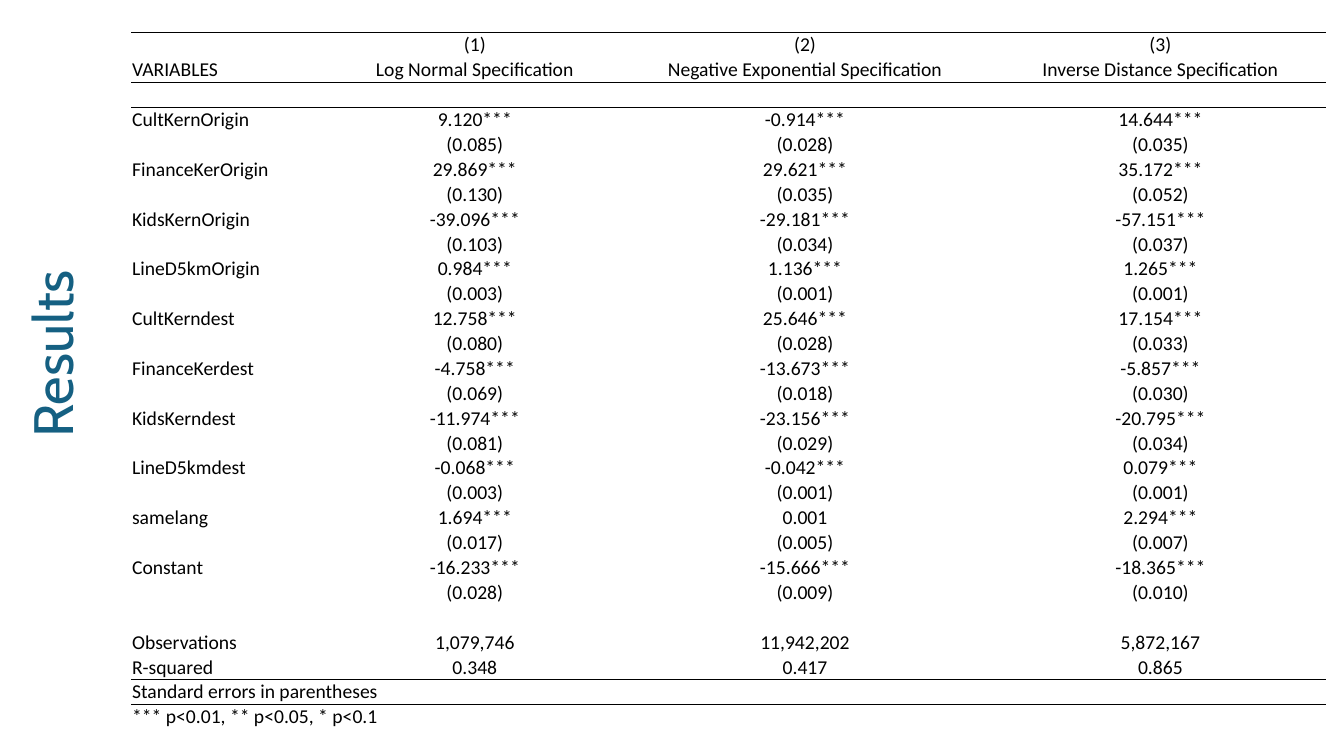
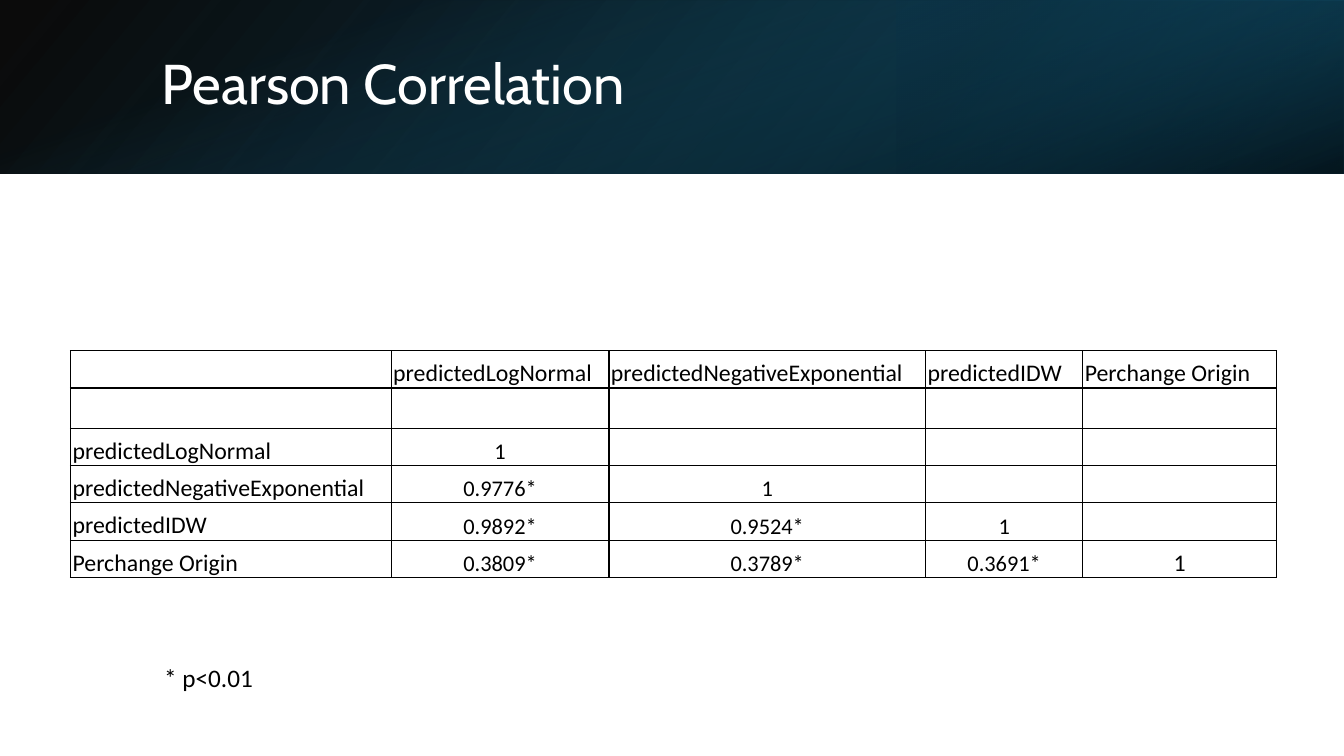
from dataclasses import dataclass

from lxml import etree
from pptx import Presentation
from pptx import util as u
from pptx.dml import color
from pptx.enum import shapes, text
from pptx.oxml import ns


@dataclass(frozen=True)
class Theme:
    heading_font: str = "Cabin"
    body_font: str = "Calibri"
    accent: str = "156082"
    deep: str = "104862"
    night: str = "0B3041"
    ink: str = "000000"
    paper: str = "FFFFFF"
    title_size: float = 40
    side_title_size: float = 39.6
    note_size: float = 18
    label_size: float = 17
    value_size: float = 16
    results_size: float = 14
    table_style: str = "{2D5ABB26-0587-4C30-8999-92F81FD0307C}"


THEME = Theme()
LEFT, CENTER = text.PP_ALIGN.LEFT, text.PP_ALIGN.CENTER

ESTIMATES = [
    ("CultKernOrigin", ("9.120***", "-0.914***", "14.644***"), ("0.085", "0.028", "0.035")),
    ("FinanceKerOrigin", ("29.869***", "29.621***", "35.172***"), ("0.130", "0.035", "0.052")),
    ("KidsKernOrigin", ("-39.096***", "-29.181***", "-57.151***"), ("0.103", "0.034", "0.037")),
    ("LineD5kmOrigin", ("0.984***", "1.136***", "1.265***"), ("0.003", "0.001", "0.001")),
    ("CultKerndest", ("12.758***", "25.646***", "17.154***"), ("0.080", "0.028", "0.033")),
    ("FinanceKerdest", ("-4.758***", "-13.673***", "-5.857***"), ("0.069", "0.018", "0.030")),
    ("KidsKerndest", ("-11.974***", "-23.156***", "-20.795***"), ("0.081", "0.029", "0.034")),
    ("LineD5kmdest", ("-0.068***", "-0.042***", "0.079***"), ("0.003", "0.001", "0.001")),
    ("samelang", ("1.694***", "0.001", "2.294***"), ("0.017", "0.005", "0.007")),
    ("Constant", ("-16.233***", "-15.666***", "-18.365***"), ("0.028", "0.009", "0.010")),
]
PREDICTORS = ["predictedLogNormal", "predictedNegativeExponential", "predictedIDW", "Perchange Origin"]
CORRELATIONS = [
    ["1"],
    ["0.9776*", "1"],
    ["0.9892*", "0.9524*", "1"],
    ["0.3809*", "0.3789*", "0.3691*", "1"],
]


def set_values(target, values):
    for name, value in values.items():
        setattr(target, name, value)


def add_child(parent, tag, **attributes):
    return etree.SubElement(parent, ns.qn(tag), attributes)


class SlideBuilder:
    def __init__(self, theme):
        self.theme = theme
        self.deck = Presentation()
        set_values(self.deck, {"slide_width": u.Inches(13.33), "slide_height": u.Inches(7.5)})
        self.slide = None

    def new_slide(self):
        self.slide = self.deck.slides.add_slide(self.deck.slide_layouts[5])
        fill = self.slide.background.fill
        fill.solid()
        fill.fore_color.rgb = color.RGBColor.from_string(self.theme.paper)

    def place(self, shape, box):
        set_values(shape, dict(zip(("left", "top", "width", "height"), map(u.Inches, box))))

    def add_words(self, para, words, size, ink=None, font=None, align=LEFT):
        para.alignment = align
        span = para.add_run()
        span.text = words
        set_values(span.font, {"size": u.Pt(size), "name": font or self.theme.body_font})
        span.font.color.rgb = color.RGBColor.from_string(ink or self.theme.ink)

    def title(self, words, box, size, ink, align=LEFT, rotation=0):
        title = self.slide.shapes.title
        self.place(title, box)
        title.rotation = rotation
        title.text_frame.vertical_anchor = text.MSO_ANCHOR.MIDDLE
        para = title.text_frame.paragraphs[0]
        para.line_spacing = 0.9
        self.add_words(para, words, size, ink, self.theme.heading_font, align)
        title.element.getparent().append(title.element)

    def gradient(self, box, stops, angle, rotation=0, flip=False):
        shape = self.slide.shapes.add_shape(shapes.MSO_SHAPE.RECTANGLE, *map(u.Inches, box))
        shape.rotation = rotation
        shape.shadow.inherit = False
        shape.line.fill.background()
        shape.fill.background()
        properties = shape.element.spPr
        if flip:
            properties.find(ns.qn("a:xfrm")).set("flipH", "1")
        empty_fill = properties.find(ns.qn("a:noFill"))
        grad = etree.Element(ns.qn("a:gradFill"), {"rotWithShape": "1"})
        stop_list = add_child(grad, "a:gsLst")
        for position, tint, opacity in stops:
            stop = add_child(stop_list, "a:gs", pos=str(position * 1000))
            rgb = add_child(stop, "a:srgbClr", val=tint)
            add_child(rgb, "a:alpha", val=str(opacity * 1000))
        add_child(grad, "a:lin", ang=str(angle * 60000), scaled="0")
        properties.replace(empty_fill, grad)

    def band(self):
        theme = self.theme
        self.gradient((0, 0, 13.33, 1.72), [(0, theme.ink, 96), (100, theme.deep, 100)], 140, flip=True)
        self.gradient((8.89, 0, 4.44, 1.72), [(19, theme.night, 68), (100, theme.accent, 79)],
                      320, rotation=180, flip=True)
        self.gradient((5.8, -5.8, 1.72, 13.33), [(23, theme.accent, 0), (99, theme.ink, 74)],
                      340, rotation=90)

    def border(self, cell, sides, width):
        properties = cell._tc.get_or_add_tcPr()
        for index, side in enumerate(sides):
            line = etree.Element(ns.qn("a:ln" + side), {"w": str(u.Pt(width))})
            add_child(add_child(line, "a:solidFill"), "a:srgbClr", val=self.theme.ink)
            properties.insert(index, line)

    def table(self, corner, widths, heights, rows, style_of, sides_of, line_width):
        box = (*corner, sum(widths), sum(heights))
        frame = self.slide.shapes.add_table(len(rows), len(widths), *map(u.Inches, box))
        table = frame.table
        set_values(table, {"first_row": False, "horz_banding": False})
        next(frame.element.iter(ns.qn("a:tableStyleId"))).text = self.theme.table_style
        for column, width in zip(table.columns, widths):
            column.width = u.Inches(width)
        for r, (row, height, words) in enumerate(zip(table.rows, heights, rows)):
            row.height = u.Inches(height)
            for c, cell in enumerate(row.cells):
                size, inset, align = style_of(r, c)
                margins = dict.fromkeys(("margin_left", "margin_right", "margin_top"), u.Inches(inset))
                set_values(cell, {**margins, "margin_bottom": 0,
                                  "vertical_anchor": text.MSO_ANCHOR.BOTTOM})
                cell.fill.background()
                self.border(cell, sides_of(r, c), line_width)
                para = cell.text_frame.paragraphs[0]
                if c < len(words) and words[c]:
                    self.add_words(para, words[c], size, align=align)
                else:
                    add_child(para._p, "a:endParaRPr", sz=str(size * 100))
        return table

    def note(self, words, box):
        shape = self.slide.shapes.add_textbox(*map(u.Inches, box))
        set_values(shape.text_frame, {"word_wrap": False, "auto_size": text.MSO_AUTO_SIZE.SHAPE_TO_FIT_TEXT})
        self.add_words(shape.text_frame.paragraphs[0], words, self.theme.note_size)


def results_slide(builder):
    theme = builder.theme
    builder.new_slide()
    builder.title("Results", (-1.75, 3.19, 4.61, 0.64), theme.side_title_size, theme.accent, CENTER, 270)
    rows = [
        ("", "(1)", "(2)", "(3)"),
        ("VARIABLES", "Log Normal Specification", "Negative Exponential Specification",
         "Inverse Distance Specification"),
        (),
    ]
    for name, coefficients, errors in ESTIMATES:
        rows += [(name, *coefficients), ("", *(f"({error})" for error in errors))]
    rows += [
        (),
        ("Observations", "1,079,746", "11,942,202", "5,872,167"),
        ("R-squared", "0.348", "0.417", "0.865"),
        ("Standard errors in parentheses",),
        ("*** p<0.01, ** p<0.05, * p<0.1",),
    ]
    first_note = len(rows) - 2
    ruled = {0: "T", 1: "B", 2: "T", first_note - 1: "B", first_note: "T"}
    table = builder.table(
        (1.3, 0.32), [2.02, 2.78, 3.77, 3.28], [6.88 / len(rows)] * len(rows), rows,
        lambda r, c: (theme.results_size, 0.01, CENTER if c else LEFT),
        lambda r, c: ruled.get(r, ""), 0.5)
    for r in (first_note, first_note + 1):
        table.cell(r, 0).merge(table.cell(r, 1))


def correlation_slide(builder):
    theme = builder.theme
    builder.new_slide()
    builder.band()
    builder.title("Pearson Correlation", (1.5, 0.38, 10.98, 0.96), theme.title_size, theme.paper)
    rows = [["", *PREDICTORS], []]
    rows += [[name, *values] for name, values in zip(PREDICTORS, CORRELATIONS)]

    def style_of(r, c):
        if r == 0 or c == 0:
            return theme.label_size, 0.02, LEFT
        if c == len(PREDICTORS):
            return theme.label_size, 0.02, CENTER
        return theme.value_size, 0, CENTER

    builder.table((0.7, 3.48), [3.18, 2.16, 3.14, 1.56, 1.92], [0.37, 0.4] + [0.37] * 4, rows,
                  style_of, lambda r, c: "LRTB", 1)
    builder.note("* p<0.01", (1.53, 6.52, 1.09, 0.4))


def main():
    builder = SlideBuilder(THEME)
    results_slide(builder)
    correlation_slide(builder)
    builder.deck.save("out.pptx")


if __name__ == "__main__":
    main()
